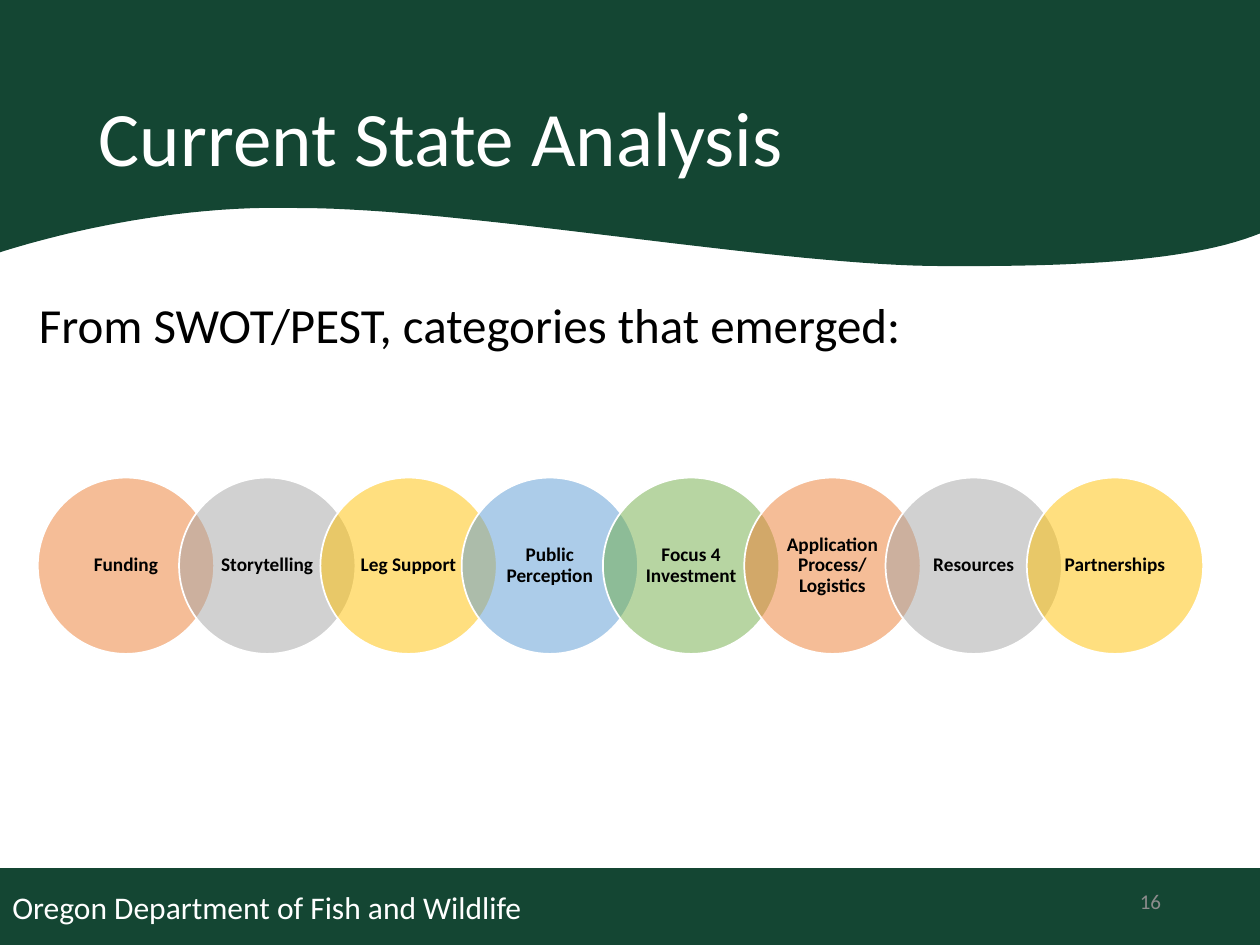
from typing import NamedTuple

from lxml.etree import SubElement
from pptx import Presentation
from pptx.dml.color import RGBColor
from pptx.enum.shapes import MSO_SHAPE
from pptx.enum.text import MSO_ANCHOR, PP_ALIGN
from pptx.oxml.ns import qn
from pptx.util import Pt

GREEN, WHITE, BLACK, GREY = "144633", "FFFFFF", "000000", "8C8C8C"
CURVE_STEPS = 32


class Point(NamedTuple):
    x: float
    y: float


class Category(NamedTuple):
    label: str
    colour: str


CATEGORIES = [
    Category("Funding", "ED7D31"),
    Category("Storytelling", "A5A5A5"),
    Category("Leg Support", "FFC000"),
    Category("Public Perception", "5B9BD5"),
    Category("Focus 4 Investment", "70AD47"),
    Category("Application Process/ Logistics", "ED7D31"),
    Category("Resources", "A5A5A5"),
    Category("Partnerships", "FFC000"),
]
CIRCLE_LEFT, CIRCLE_TOP, CIRCLE_SIZE, CIRCLE_PITCH = 21.6, 272.9, 100.8, 80.74

BANNER_CORNERS = [Point(-17.3, 146.9), Point(-14.4, -4.3), Point(735.1, -4.3), Point(738, 120.2)]
# Each wave is two control points and an end point.
BANNER_WAVES = [
    (Point(704.2, 145.4), Point(626.4, 149.8), Point(532.1, 149)),
    (Point(437.8, 147.6), Point(263.5, 115.9), Point(171.4, 115.9)),
    (Point(70.6, 113), Point(-17.3, 146.9), Point(-17.3, 146.9)),
]


def rgb(colour: str) -> RGBColor:
    return RGBColor.from_string(colour)


def paint(shape, fill: str, line: str, width: float, opacity: int = 100) -> None:
    shape.shadow.inherit = False
    shape.fill.solid()
    shape.fill.fore_color.rgb = rgb(fill)
    shape.line.color.rgb = rgb(line)
    shape.line.width = Pt(width)
    if opacity < 100:
        solid_colour = shape.fill._xPr.find(qn("a:solidFill"))[0]
        SubElement(solid_colour, qn("a:alpha"), val=str(opacity * 1000))


def write(shape, text: str, *, size: float, colour: str = BLACK, bold: bool = False,
          align=PP_ALIGN.LEFT, anchor=MSO_ANCHOR.MIDDLE, spacing: float = 1.0,
          before: float = 0, inset: tuple[float, float] = (7.2, 3.6)) -> None:
    frame = shape.text_frame
    frame.word_wrap = True
    frame.vertical_anchor = anchor
    frame.margin_left = frame.margin_right = Pt(inset[0])
    frame.margin_top = frame.margin_bottom = Pt(inset[1])
    paragraph = frame.paragraphs[0]
    paragraph.alignment = align
    paragraph.line_spacing = spacing
    paragraph.space_before = Pt(before)
    run = paragraph.add_run()
    run.text = text
    run.font.name = "Calibri"
    run.font.size = Pt(size)
    run.font.bold = bold
    run.font.color.rgb = rgb(colour)


def add_text(slide, left: float, top: float, width: float, height: float,
             text: str, **text_format) -> None:
    box = slide.shapes.add_textbox(Pt(left), Pt(top), Pt(width), Pt(height))
    write(box, text, **text_format)


def bezier(start: Point, control1: Point, control2: Point, end: Point) -> list[Point]:
    """Return points along a cubic curve, without its start."""
    def blend(a: float, b: float, c: float, d: float, t: float) -> float:
        u = 1 - t
        return u**3 * a + 3 * u**2 * t * b + 3 * u * t**2 * c + t**3 * d

    steps = [i / CURVE_STEPS for i in range(1, CURVE_STEPS + 1)]
    return [Point(*(blend(*axis, t) for axis in zip(start, control1, control2, end)))
            for t in steps]


def add_banner(slide) -> None:
    outline = list(BANNER_CORNERS)
    for wave in BANNER_WAVES:
        outline += bezier(outline[-1], *wave)
    first, *rest = [(Pt(point.x), Pt(point.y)) for point in outline]
    builder = slide.shapes.build_freeform(*first)
    builder.add_line_segments(rest, close=True)
    paint(builder.convert_to_shape(), GREEN, GREEN, 6)


def add_footer(slide) -> None:
    footer = slide.shapes.add_shape(MSO_SHAPE.RECTANGLE, Pt(0), Pt(496.8), Pt(720), Pt(43.2))
    paint(footer, GREEN, GREEN, 1)
    write(footer, "Oregon Department of Fish and Wildlife", size=18, colour=WHITE)


def add_category(slide, index: int, category: Category) -> None:
    circle = slide.shapes.add_shape(
        MSO_SHAPE.OVAL, Pt(CIRCLE_LEFT + index * CIRCLE_PITCH), Pt(CIRCLE_TOP),
        Pt(CIRCLE_SIZE), Pt(CIRCLE_SIZE))
    paint(circle, category.colour, WHITE, 1, opacity=50)
    write(circle, category.label, size=11, bold=True, align=PP_ALIGN.CENTER,
          spacing=0.9, inset=(5.5, 1.4))


def main() -> None:
    presentation = Presentation()
    presentation.slide_width, presentation.slide_height = Pt(720), Pt(540)
    slide = presentation.slides.add_slide(presentation.slide_layouts[6])
    add_footer(slide)
    add_banner(slide)
    for index, category in enumerate(CATEGORIES):
        add_category(slide, index, category)
    add_text(slide, 49.5, 28.8, 621, 104.4, "Current State Analysis",
             size=44, colour=WHITE, spacing=0.9)
    add_text(slide, 15.1, 168.5, 527.8, 51.1, "From SWOT/PEST, categories that emerged:",
             size=28, anchor=MSO_ANCHOR.TOP, spacing=0.9, before=10)
    add_text(slide, 508.5, 500.5, 162, 28.8, "16", size=12, colour=GREY, align=PP_ALIGN.RIGHT)
    presentation.save("out.pptx")


if __name__ == "__main__":
    main()
